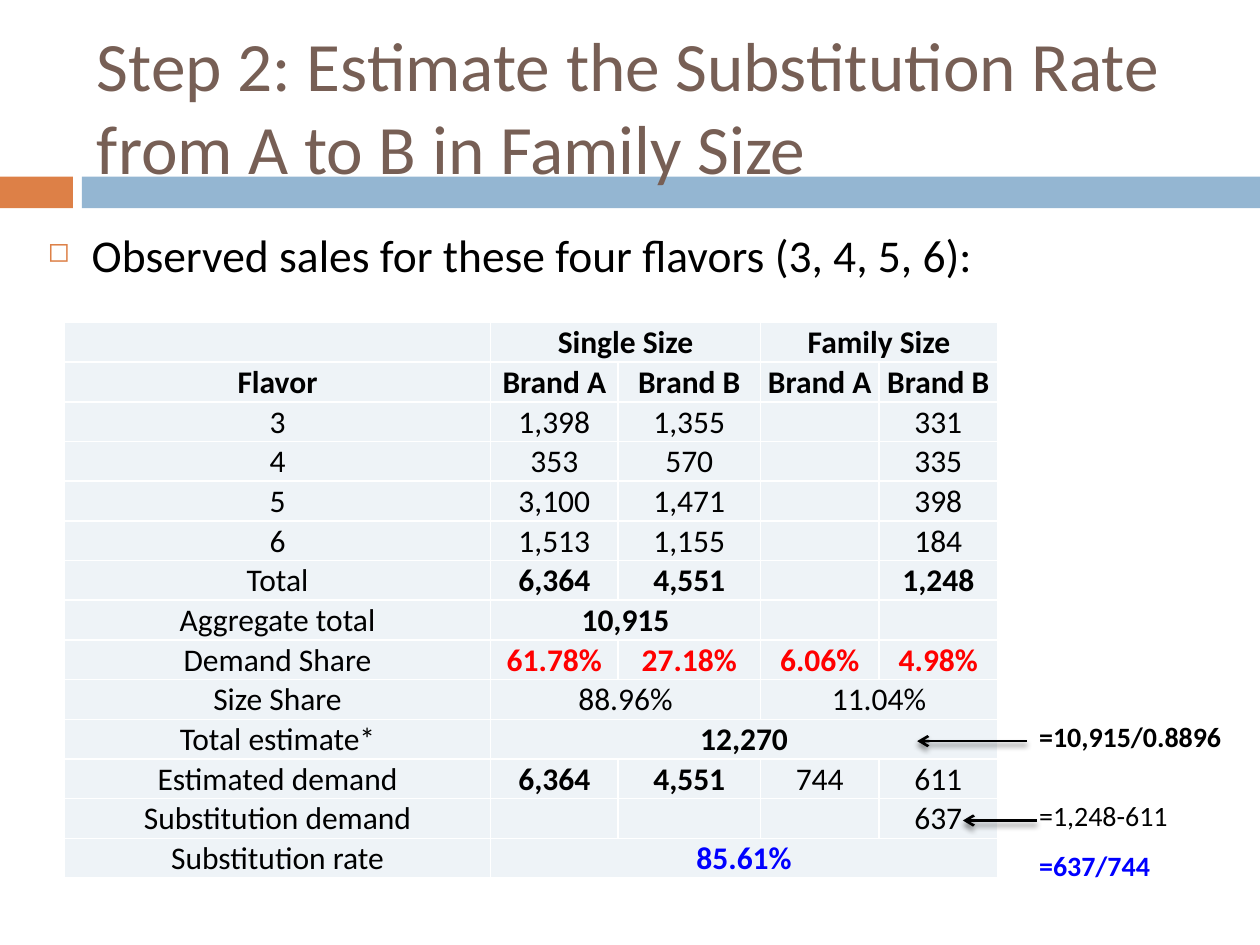
from lxml import etree
from pptx import Presentation
from pptx.dml.color import RGBColor
from pptx.enum.shapes import MSO_CONNECTOR, MSO_SHAPE
from pptx.enum.text import MSO_ANCHOR, MSO_AUTO_SIZE, PP_ALIGN
from pptx.oxml import parse_xml
from pptx.oxml.ns import nsdecls
from pptx.util import Cm, Pt

BLACK = RGBColor(0x00, 0x00, 0x00)
RED = RGBColor(0xFF, 0x00, 0x00)
BLUE = RGBColor(0x00, 0x00, 0xFF)
BROWN = RGBColor(0x77, 0x5F, 0x55)
ORANGE = RGBColor(0xDD, 0x80, 0x47)
LIGHT_BLUE = RGBColor(0x94, 0xB6, 0xD2)
CELL_FILL = RGBColor(0xEE, 0xF3, 0xF7)


def write(text_frame, text, size, color=BLACK, bold=False, align=PP_ALIGN.LEFT):
    """Put one formatted run in the first paragraph and return the paragraph."""
    paragraph = text_frame.paragraphs[0]
    paragraph.alignment = align
    run = paragraph.add_run()
    run.text = text
    run.font.color.rgb = color
    for name, value in {"name": "Calibri", "size": Pt(size), "bold": bold}.items():
        setattr(run.font, name, value)
    return paragraph


def add_text_box(left, top, width, height):
    text_box = slide.shapes.add_textbox(Cm(left), Cm(top), Cm(width), Cm(height))
    text_box.text_frame.word_wrap = True
    return text_box.text_frame


presentation = Presentation()
presentation.slide_width = Cm(25.4)
presentation.slide_height = Cm(19.05)
slide = presentation.slides.add_slide(presentation.slide_layouts[5])

# Colour band behind the title
for left, width, color in [(0, 1.47, ORANGE), (1.65, 23.75, LIGHT_BLUE)]:
    bar = slide.shapes.add_shape(MSO_SHAPE.RECTANGLE, Cm(left), Cm(3.56), Cm(width), Cm(0.64))
    bar.shadow.inherit = False
    bar.fill.solid()
    bar.fill.fore_color.rgb = color
    bar.line.fill.background()

# Bullet line
bullet = write(add_text_box(0.71, 4.45, 20, 12.5),
               "Observed sales for these four flavors (3, 4, 5, 6):", 26)
bullet.space_before = Pt(7)
bullet_properties = bullet._p.get_or_add_pPr()
bullet_properties.set("marL", str(Cm(0.89)))
bullet_properties.set("indent", str(Cm(-0.89)))
for xml in [f'<a:buClr {nsdecls("a")}><a:srgbClr val="{ORANGE}"/></a:buClr>',
            f'<a:buSzPct {nsdecls("a")} val="60000"/>',
            f'<a:buChar {nsdecls("a")} char="◻"/>']:
    bullet_properties.append(parse_xml(xml))

# Sales table: None continues the cell to its left
rows = [
    ["", "Single Size", None, "Family Size", None],
    ["Flavor", "Brand A", "Brand B", "Brand A", "Brand B"],
    ["3", "1,398", "1,355", "", "331"],
    ["4", "353", "570", "", "335"],
    ["5", "3,100", "1,471", "", "398"],
    ["6", "1,513", "1,155", "", "184"],
    ["Total", "6,364", "4,551", "", "1,248"],
    ["Aggregate total", "10,915", None, "", ""],
    ["Demand Share", "61.78%", "27.18%", "6.06%", "4.98%"],
    ["Size Share", "88.96%", None, "11.04%", None],
    ["Total estimate*", "12,270", None, None, None],
    ["Estimated demand", "6,364", "4,551", "744", "611"],
    ["Substitution demand", "", "", "", "637"],
    ["Substitution rate", "85.61%", None, None, None],
]
column_widths = [8.59, 2.57, 2.87, 2.39, 2.39]
bold_values = {"6,364", "4,551", "1,248", "10,915", "12,270"}
row_colors = {"Demand Share": RED, "Substitution rate": BLUE}
cell_format = {"margin_left": Cm(0.02), "margin_right": Cm(0.02), "margin_top": Cm(0.02),
               "margin_bottom": 0, "vertical_anchor": MSO_ANCHOR.BOTTOM}

table = slide.shapes.add_table(len(rows), len(column_widths), Cm(1.3), Cm(6.5),
                               Cm(sum(column_widths)), Cm(0.8 * len(rows))).table
table.first_row = False
table.horz_banding = False
for column, width in zip(table.columns, column_widths):
    column.width = Cm(width)
for row_index, values in enumerate(rows):
    table.rows[row_index].height = Cm(0.8)
    for column_index, value in enumerate(values):
        cell = table.cell(row_index, column_index)
        cell.fill.solid()
        cell.fill.fore_color.rgb = CELL_FILL
        for name, setting in cell_format.items():
            setattr(cell, name, setting)
        if not value:
            continue
        last = column_index
        while last + 1 < len(values) and values[last + 1] is None:
            last += 1
        if last > column_index:
            cell.merge(table.cell(row_index, last))
        color = row_colors.get(values[0], BLACK) if column_index else BLACK
        bold = row_index < 2 or value in bold_values or color != BLACK
        write(cell.text_frame, value, 18, color, bold, PP_ALIGN.CENTER)

# Formulas beside the table
for top, formula, color, bold in [(14.38, "=10,915/0.8896", BLACK, True),
                                  (15.98, "=1,248-611", BLACK, False),
                                  (16.99, "=637/744", BLUE, True)]:
    write(add_text_box(20.7, top, 4.7, 0.94), formula, 16, color, bold)

# Arrows from the formulas to their cells
for start, end, height in [(20.7, 18.49, 14.94), (20.9, 19.41, 16.54)]:
    arrow = slide.shapes.add_connector(MSO_CONNECTOR.STRAIGHT, Cm(start), Cm(height),
                                       Cm(end), Cm(height))
    arrow.line.color.rgb = BLACK
    arrow.line.width = Pt(1.5)
    etree.SubElement(arrow.line._get_or_add_ln(), "{%s}tailEnd" % arrow._element.nsmap["a"],
                     type="arrow")
    arrow._element.spPr.append(parse_xml(
        f'<a:effectLst {nsdecls("a")}>'
        f'<a:outerShdw blurRad="{Pt(3)}" dist="{Pt(2.4)}" dir="5400000" rotWithShape="0">'
        f'<a:srgbClr val="{BLACK}"><a:alpha val="45000"/></a:srgbClr>'
        '</a:outerShdw></a:effectLst>'))

# Title, in front of the band
title = slide.shapes.title
for name, value in {"left": Cm(1.7), "top": Cm(0.76), "width": Cm(23.7),
                    "height": Cm(2.74)}.items():
    setattr(title, name, value)
for name, value in {"word_wrap": True, "auto_size": MSO_AUTO_SIZE.NONE,
                    "vertical_anchor": MSO_ANCHOR.MIDDLE}.items():
    setattr(title.text_frame, name, value)
write(title.text_frame, "Step 2: Estimate the Substitution Rate from A to B in Family Size",
      39.6, BROWN)
slide.shapes._spTree.append(title._element)

presentation.save("out.pptx")
